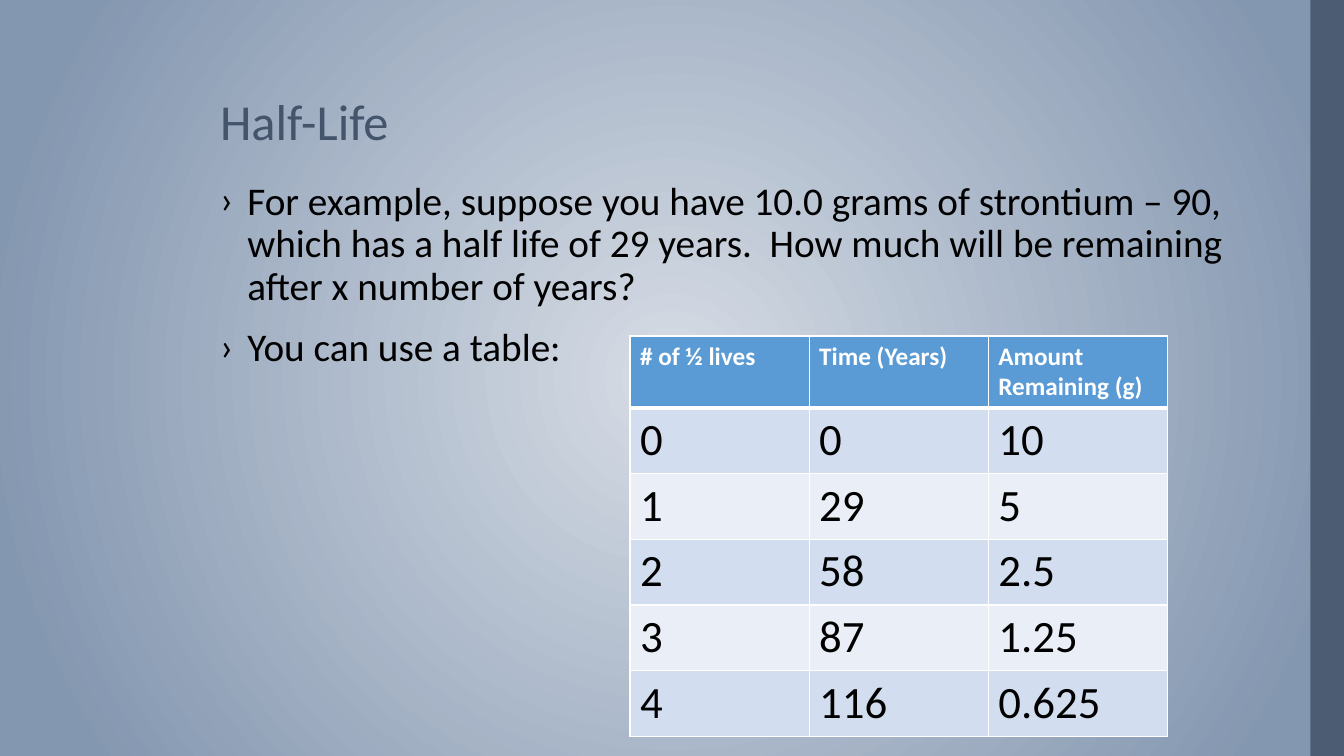
"""Build the Half-Life slide with its decay table."""
from dataclasses import dataclass

from pptx import Presentation
from pptx.dml.color import RGBColor
from pptx.enum.shapes import MSO_SHAPE
from pptx.enum.text import MSO_ANCHOR, MSO_AUTO_SIZE, PP_ALIGN
from pptx.oxml import parse_xml
from pptx.oxml.ns import nsdecls, qn
from pptx.shapes.base import BaseShape
from pptx.slide import Slide
from pptx.table import _Cell
from pptx.text.text import _Paragraph
from pptx.util import Emu, Pt

EMU_PER_PX = 6350
FONT = "Calibri"
BLACK = RGBColor(0x00, 0x00, 0x00)
WHITE = RGBColor(0xFF, 0xFF, 0xFF)
SLATE = RGBColor(0x44, 0x54, 0x6A)
GLOW = RGBColor(0xD6, 0xDC, 0xE5)
EDGE = RGBColor(0x84, 0x97, 0xB0)
HEADER_BLUE = RGBColor(0x5B, 0x9B, 0xD5)
BANDS = (RGBColor(0xD2, 0xDE, 0xEF), RGBColor(0xEA, 0xEF, 0xF7))

BULLETS = (
    "For example, suppose you have 10.0 grams of strontium – 90, which has a half life "
    "of 29 years.  How much will be remaining after x number of years?",
    "You can use a table:",
)
HEADERS = ("# of ½ lives", "Time (Years)", "Amount Remaining (g)")
DECAY = (
    ("0", "0", "10"),
    ("1", "29", "5"),
    ("2", "58", "2.5"),
    ("3", "87", "1.25"),
    ("4", "116", "0.625"),
)


@dataclass(frozen=True)
class Box:
    left: int
    top: int
    width: int
    height: int

    def emu(self) -> tuple[Emu, Emu, Emu, Emu]:
        return px(self.left), px(self.top), px(self.width), px(self.height)


@dataclass(frozen=True)
class RowStyle:
    fill: RGBColor
    color: RGBColor
    size: int
    bold: bool
    top_border: int
    bottom_border: int


SIDE_BAR = Box(1872, 0, 48, 1080)
TITLE = Box(300, 27, 1492, 196)
BODY = Box(300, 252, 1492, 720)
TABLE = Box(900, 480, 768, 564)


def px(value: int) -> Emu:
    return Emu(value * EMU_PER_PX)


def place(shape: BaseShape, box: Box) -> None:
    shape.left, shape.top, shape.width, shape.height = box.emu()


def write(paragraph: _Paragraph, text: str, *, size: int, color: RGBColor,
          bold: bool = False, line_spacing: float = 1.0, before: int = 0) -> None:
    paragraph.alignment = PP_ALIGN.LEFT
    paragraph.line_spacing = line_spacing
    paragraph.space_before = Pt(before)
    run = paragraph.add_run()
    run.text = text
    run.font.name = FONT
    run.font.size = Pt(size)
    run.font.bold = bold
    run.font.color.rgb = color


def paint_background(slide: Slide) -> None:
    fill = slide.background.fill
    fill.gradient()
    for stop, color, position in zip(fill.gradient_stops, (GLOW, EDGE), (0, 0.9)):
        stop.color.rgb = color
        stop.position = position
    linear = slide.element.find(".//" + qn("a:lin"))
    linear.getparent().replace(linear, parse_xml(
        f'<a:path {nsdecls("a")} path="circle">'
        '<a:fillToRect l="50000" t="50000" r="50000" b="50000"/></a:path>'))


def add_side_bar(slide: Slide) -> None:
    bar = slide.shapes.add_shape(MSO_SHAPE.RECTANGLE, *SIDE_BAR.emu())
    bar.shadow.inherit = False
    bar.fill.solid()
    bar.fill.fore_color.rgb = SLATE
    bar.line.fill.background()
    color = bar.element.spPr.find(".//" + qn("a:srgbClr"))
    color.append(parse_xml(f'<a:alpha {nsdecls("a")} val="87000"/>'))


def fill_title(slide: Slide) -> None:
    title = slide.shapes.title
    place(title, TITLE)
    frame = title.text_frame
    frame.auto_size = MSO_AUTO_SIZE.NONE
    frame.vertical_anchor = MSO_ANCHOR.BOTTOM
    write(frame.paragraphs[0], "Half-Life", size=36, color=SLATE, line_spacing=0.9)


def add_bullet(paragraph: _Paragraph) -> None:
    properties = paragraph._p.get_or_add_pPr()
    indent = px(39)
    properties.set("marL", str(indent))
    properties.set("indent", str(-indent))
    properties.append(parse_xml(f'<a:buFont {nsdecls("a")} typeface="{FONT}"/>'))
    properties.append(parse_xml(f'<a:buChar {nsdecls("a")} char="›"/>'))


def fill_body(slide: Slide) -> None:
    body = slide.placeholders[1]
    place(body, BODY)
    frame = body.text_frame
    frame.auto_size = MSO_AUTO_SIZE.NONE
    frame.vertical_anchor = MSO_ANCHOR.TOP
    for index, text in enumerate(BULLETS):
        paragraph = frame.add_paragraph() if index else frame.paragraphs[0]
        add_bullet(paragraph)
        write(paragraph, text, size=28, color=BLACK, line_spacing=0.9,
              before=14 if index else 0)


def format_cell(cell: _Cell, text: str, style: RowStyle) -> None:
    write(cell.text_frame.paragraphs[0], text, size=style.size, color=style.color,
          bold=style.bold)
    properties = cell._tc.get_or_add_tcPr()
    borders = {"lnL": 1, "lnR": 1, "lnT": style.top_border, "lnB": style.bottom_border}
    for side, points in borders.items():
        properties.append(parse_xml(
            f'<a:{side} {nsdecls("a")} w="{Pt(points)}"><a:solidFill>'
            f'<a:srgbClr val="{WHITE}"/></a:solidFill></a:{side}>'))
    cell.fill.solid()
    cell.fill.fore_color.rgb = style.fill


def row_style(index: int) -> RowStyle:
    if index == 0:
        return RowStyle(HEADER_BLUE, WHITE, 18, True, 1, 3)
    return RowStyle(BANDS[(index - 1) % 2], BLACK, 32, False, 3 if index == 1 else 1, 1)


def add_decay_table(slide: Slide) -> None:
    rows = (HEADERS, *DECAY)
    table = slide.shapes.add_table(len(rows), len(HEADERS), *TABLE.emu()).table
    for row_index, values in enumerate(rows):
        for column_index, text in enumerate(values):
            format_cell(table.cell(row_index, column_index), text, row_style(row_index))


def main() -> None:
    presentation = Presentation()
    presentation.slide_width = px(1920)
    presentation.slide_height = px(1080)
    slide = presentation.slides.add_slide(presentation.slide_layouts[1])
    paint_background(slide)
    add_side_bar(slide)
    fill_title(slide)
    fill_body(slide)
    add_decay_table(slide)
    presentation.save("out.pptx")


if __name__ == "__main__":
    main()
